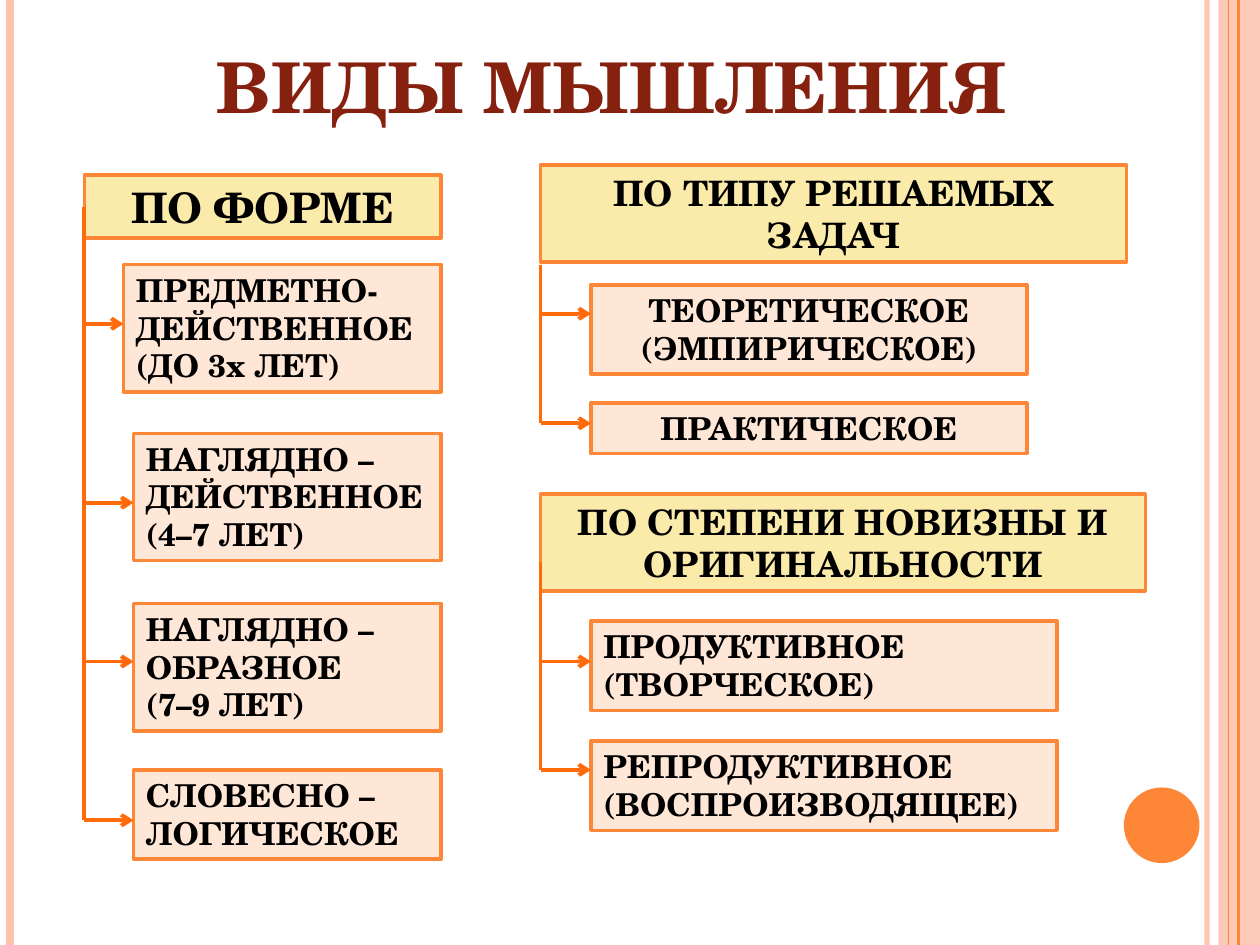
from dataclasses import dataclass
from typing import Optional

from lxml import etree
from pptx import Presentation
from pptx import util as u
from pptx.dml.color import RGBColor
from pptx.enum import shapes, text
from pptx.oxml.ns import qn

FONT = "TeX Gyre Schola"
ORANGE, PINK, ARROW = "FE8637", "FEC3AE", "FF6B0A"
HEADING_FILL, ITEM_FILL = "FBEBAB", "FFE7D7"
LEFT, CENTER = text.PP_ALIGN.LEFT, text.PP_ALIGN.CENTER


@dataclass
class Item:
    """A kind of thinking, and the height at which its arrow arrives."""
    lines: list[str]
    left: float
    top: float
    width: float
    height: float
    arrow_y: float
    align: text.PP_ALIGN = LEFT


@dataclass
class Group:
    heading: str
    left: float
    top: float
    width: float
    height: float
    size: int
    spine_top: float
    items: list[Item]


@dataclass
class Stripe:
    x: float
    color: str
    weight: float
    opacity: Optional[int] = None


STRIPES = [
    Stripe(9.58, PINK, 3, 93),
    Stripe(0.08, PINK, 4.5),
    Stripe(9.83, ORANGE, 1.5),
    Stripe(9.75, ORANGE, 0.75),
]

GROUPS = [
    Group("ПО ФОРМЕ", 0.67, 1.39, 2.83, 0.5, 24, 1.64, [
        Item(["ПРЕДМЕТНО- ДЕЙСТВЕННОЕ", "(ДО 3х ЛЕТ)"], 0.98, 2.1, 2.52, 1.01, 2.57),
        Item(["НАГЛЯДНО – ДЕЙСТВЕННОЕ", "(4–7 ЛЕТ)"], 1.06, 3.44, 2.44, 1.01, 3.99),
        Item(["НАГЛЯДНО – ОБРАЗНОЕ", "(7–9 ЛЕТ)"], 1.06, 4.79, 2.44, 1.01, 5.25),
        Item(["СЛОВЕСНО – ЛОГИЧЕСКОЕ"], 1.06, 6.11, 2.44, 0.71, 6.51),
    ]),
    Group("ПО ТИПУ РЕШАЕМЫХ ЗАДАЧ", 4.29, 1.31, 4.65, 0.77, 20, 2.1, [
        Item(["ТЕОРЕТИЧЕСКОЕ (ЭМПИРИЧЕСКОЕ)"], 4.69, 2.26, 3.46, 0.71, 2.49, CENTER),
        Item(["ПРАКТИЧЕСКОЕ"], 4.69, 3.2, 3.46, 0.4, 3.36, CENTER),
    ]),
    Group("ПО СТЕПЕНИ НОВИЗНЫ И ОРИГИНАЛЬНОСТИ", 4.29, 3.92, 4.8, 0.77, 20, 4.46, [
        Item(["ПРОДУКТИВНОЕ (ТВОРЧЕСКОЕ)"], 4.69, 4.93, 3.7, 0.71, 5.25),
        Item(["РЕПРОДУКТИВНОЕ (ВОСПРОИЗВОДЯЩЕЕ)"], 4.69, 5.88, 3.7, 0.71, 6.11),
    ]),
]


def paint(color_format, color: str) -> None:
    color_format.rgb = RGBColor.from_string(color)


def set_opacity(properties, percent: int) -> None:
    """Make the first solid colour under a properties element translucent."""
    color = properties.find(".//" + qn("a:srgbClr"))
    etree.SubElement(color, qn("a:alpha"), val=str(percent * 1000))


def style_paragraph(para, size: int, color: str, align: text.PP_ALIGN) -> None:
    para.alignment = align
    para.font.name = FONT
    para.font.size = u.Pt(size)
    para.font.bold = True
    paint(para.font.color, color)


def add_filled(page, kind, left: float, top: float, width: float, height: float, fill: str):
    shape = page.shapes.add_shape(kind, *map(u.Inches, (left, top, width, height)))
    shape.shadow.inherit = False
    shape.fill.solid()
    paint(shape.fill.fore_color, fill)
    shape.line.fill.background()
    return shape


def add_line(page, x1: float, y1: float, x2: float, y2: float,
             color: str = ARROW, weight: float = 2.25, arrow: bool = False):
    line = page.shapes.add_connector(
        shapes.MSO_CONNECTOR.STRAIGHT, *map(u.Inches, (x1, y1, x2, y2)))
    line.line.width = u.Pt(weight)
    paint(line.line.color, color)
    properties = line._element.spPr
    if arrow:
        etree.SubElement(properties.find(qn("a:ln")), qn("a:tailEnd"), type="arrow")
    etree.SubElement(properties, qn("a:effectLst"))
    return line


def add_label(page, lines: list[str], left: float, top: float, width: float,
              height: float, fill: str, size: int, align: text.PP_ALIGN) -> None:
    box = add_filled(page, shapes.MSO_SHAPE.RECTANGLE, left, top, width, height, fill)
    paint(box.line.color, ORANGE)
    box.line.width = u.Pt(2)
    frame = box.text_frame
    frame.word_wrap = True
    frame.auto_size = text.MSO_AUTO_SIZE.SHAPE_TO_FIT_TEXT
    frame.vertical_anchor = text.MSO_ANCHOR.TOP
    frame.text = "\n".join(lines)
    for para in frame.paragraphs:
        style_paragraph(para, size, "000000", align)


def add_group(page, group: Group) -> None:
    add_label(page, [group.heading], group.left, group.top, group.width,
              group.height, HEADING_FILL, group.size, CENTER)
    add_line(page, group.left, group.spine_top, group.left, group.items[-1].arrow_y)
    for item in group.items:
        add_label(page, item.lines, item.left, item.top, item.width,
                  item.height, ITEM_FILL, 18, item.align)
        add_line(page, group.left, item.arrow_y, item.left, item.arrow_y, arrow=True)


def add_decoration(page) -> None:
    band = add_filled(page, shapes.MSO_SHAPE.RECTANGLE, 9.67, 0, 0.33, 7.5, PINK)
    set_opacity(band._element.spPr, 87)
    for stripe in STRIPES:
        line = add_line(page, stripe.x, 0, stripe.x, 7.5, stripe.color, stripe.weight)
        if stripe.opacity is not None:
            set_opacity(line._element.spPr, stripe.opacity)
    add_filled(page, shapes.MSO_SHAPE.OVAL, 8.92, 6.25, 0.6, 0.6, ORANGE)


def set_title(page, words: str) -> None:
    title = page.shapes.title
    title.left, title.top = u.Inches(0.77), u.Inches(-0.19)
    title.width, title.height = u.Inches(8.17), u.Inches(1.25)
    title.text_frame.text = words
    title.text_frame.vertical_anchor = text.MSO_ANCHOR.BOTTOM
    style_paragraph(title.text_frame.paragraphs[0], 40, "862110", CENTER)


def main() -> None:
    deck = Presentation()
    deck.slide_width, deck.slide_height = u.Inches(10), u.Inches(7.5)
    page = deck.slides.add_slide(deck.slide_layouts.get_by_name("Title Only"))
    add_decoration(page)
    set_title(page, "ВИДЫ МЫШЛЕНИЯ")
    for group in GROUPS:
        add_group(page, group)
    deck.save("out.pptx")


if __name__ == "__main__":
    main()
